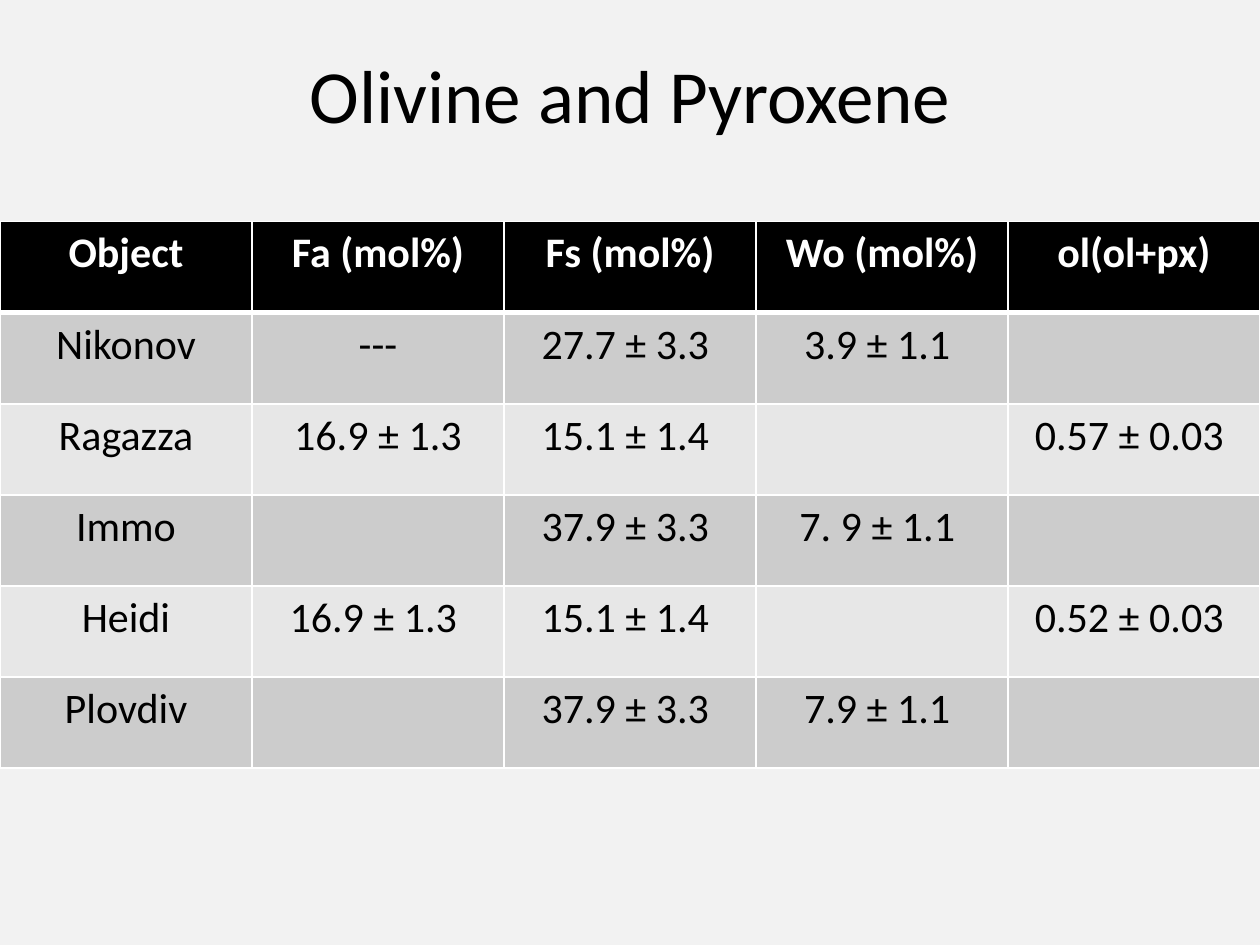
import pptx
import pptx.util
import pptx.dml.color
import pptx.enum.text
from lxml import etree
from pptx.util import Cm

INK = {"back": "F2F2F2", "head": "000000", "odd": "CCCCCC",
       "even": "E7E7E7", "text": "000000", "white": "FFFFFF"}
ROWS = [
    ["Object", "Fa (mol%)", "Fs (mol%)", "Wo (mol%)", "ol(ol+px)"],
    ["Nikonov", "---", "27.7 ± 3.3 ", "3.9 ± 1.1 ", ""],
    ["Ragazza", "16.9 ± 1.3", "15.1 ± 1.4 ", "", "0.57 ± 0.03 "],
    ["Immo", "", "37.9 ± 3.3 ", "7. 9 ± 1.1 ", ""],
    ["Heidi", "16.9 ± 1.3 ", "15.1 ± 1.4 ", "", "0.52 ± 0.03 "],
    ["Plovdiv", "", "37.9 ± 3.3 ", "7.9 ± 1.1 ", ""],
]


def rgb(name):
    return pptx.dml.color.RGBColor.from_string(INK[name])


def write(frame, text, size=24, color="text", bold=False):
    para = frame.paragraphs[0]
    para.alignment = pptx.enum.text.PP_ALIGN.CENTER
    para.font.size = pptx.util.Pt(size)
    if text:
        run = para.add_run()
        run.text = text
        run.font.name = "Calibri"
        run.font.size = pptx.util.Pt(size)
        run.font.bold = bold
        run.font.color.rgb = rgb(color)


deck = pptx.Presentation()
deck.slide_width, deck.slide_height = Cm(25.4), Cm(19.05)
slide = deck.slides.add_slide(deck.slide_layouts[5])
slide.background.fill.solid()
slide.background.fill.fore_color.rgb = rgb("back")

title = slide.shapes.title
title.left, title.top, title.width, title.height = Cm(1.27), Cm(0.76), Cm(22.86), Cm(3.18)
title.text_frame.vertical_anchor = pptx.enum.text.MSO_ANCHOR.TOP
title.text_frame.margin_top = Cm(0.22)
write(title.text_frame, "Olivine and Pyroxene", size=42.9)

grid = slide.shapes.add_table(len(ROWS), len(ROWS[0]), Cm(0), Cm(4.47),
                              Cm(25.4), Cm(11.02)).table
for r, row in enumerate(ROWS):
    head = r == 0
    fill = "head" if head else "odd" if r % 2 else "even"
    for c, text in enumerate(row):
        cell = grid.cell(r, c)
        write(cell.text_frame, text, color="white" if head else "text", bold=head)

        # Borders must come before the fill in the cell properties.
        props = cell._tc.get_or_add_tcPr()
        for side in "LRTB":
            thick = (r, side) in [(0, "B"), (1, "T")]
            width = pptx.util.Pt(3 if thick else 1)
            line = etree.SubElement(props, pptx.oxml.ns.qn(f"a:ln{side}"), w=str(width))
            paint = etree.SubElement(line, pptx.oxml.ns.qn("a:solidFill"))
            etree.SubElement(paint, pptx.oxml.ns.qn("a:srgbClr"), val=INK["white"])
        cell.fill.solid()
        cell.fill.fore_color.rgb = rgb(fill)

deck.save("out.pptx")
